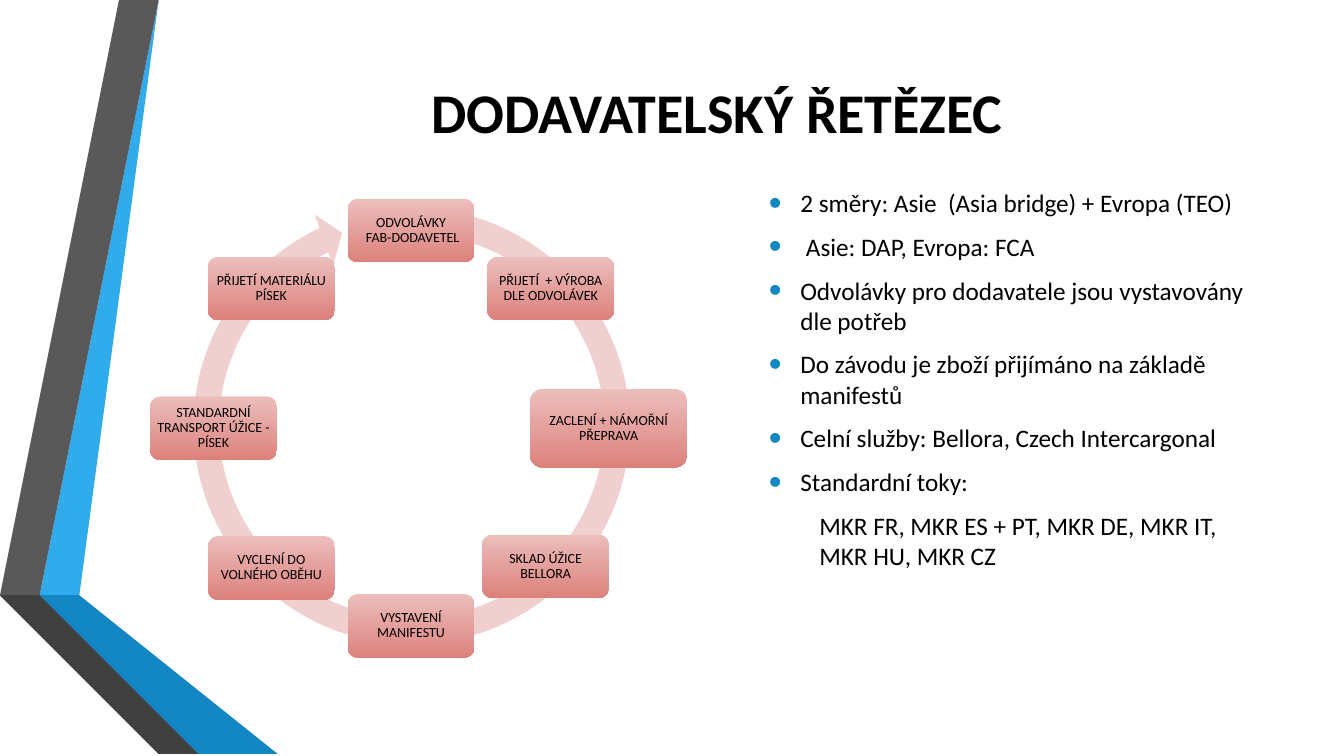
import pptx
import pptx.util
import pptx.dml.color
import pptx.enum.shapes
import pptx.enum.text
import pptx.oxml.ns
import lxml.etree
import math

Cm, Pt = pptx.util.Cm, pptx.util.Pt
RGBColor = pptx.dml.color.RGBColor
SHAPE = pptx.enum.shapes.MSO_SHAPE
ALIGN = pptx.enum.text.PP_ALIGN
ANCHOR = pptx.enum.text.MSO_ANCHOR

# Content
TITLE = "DODAVATELSKÝ ŘETĚZEC"
BULLETS = [
    "2 směry: Asie  (Asia bridge) + Evropa (TEO)",
    " Asie: DAP, Evropa: FCA",
    "Odvolávky pro dodavatele jsou vystavovány dle potřeb",
    "Do závodu je zboží přijímáno na základě manifestů",
    "Celní služby: Bellora, Czech Intercargonal",
    "Standardní toky:",
]
FLOWS = "MKR FR, MKR ES + PT, MKR DE, MKR IT,\vMKR HU, MKR CZ"

# Steps clockwise from the top: label, scale of the box, shift of its centre in cm
STEPS = [
    ("ODVOLÁVKY\v FAB-DODAVETEL", 1, (0, 0)),
    ("PŘIJETÍ  + VÝROBA DLE ODVOLÁVEK", 1, (0, 0)),
    ("ZACLENÍ + NÁMOŘNÍ PŘEPRAVA", 1.24, (0, 0)),
    ("SKLAD ÚŽICE BELLORA", 1, (-0.13, -0.04)),
    ("VYSTAVENÍ MANIFESTU", 1, (0, 0)),
    ("VYCLENÍ DO VOLNÉHO OBĚHU", 1, (0, 0)),
    ("STANDARDNÍ TRANSPORT ÚŽICE - PÍSEK", 1, (0, 0)),
    ("PŘIJETÍ MATERIÁLU PÍSEK", 1, (0, 0)),
]

# Colours and font
FONT = "Calibri"
BLACK = RGBColor(0x00, 0x00, 0x00)
BLUE = RGBColor(0x12, 0x87, 0xC3)
LIGHT_BLUE = RGBColor(0x30, 0xAC, 0xEC)
DARK_BLUE = RGBColor(0x0C, 0x5A, 0x82)
GREY = RGBColor(0x59, 0x59, 0x59)
DARK_GREY = RGBColor(0x40, 0x40, 0x40)
NEAR_BLACK = RGBColor(0x26, 0x26, 0x26)
RING_PINK = RGBColor(0xF0, 0xD0, 0xCE)
STEP_TOP = RGBColor(0xEB, 0xBE, 0xBC)
STEP_BOTTOM = RGBColor(0xDD, 0x81, 0x7C)

# Ribbon outlines in cm, from back to front
RIBBONS = [
    (LIGHT_BLUE, [(1.27, 14.68), (1.96, 14.81), (4.39, 0), (3.68, 0)]),
    (GREY, [(3.53, 0), (2.82, 0), (0.41, 14.55), (1.12, 14.66)]),
    (NEAR_BLACK, [(0.41, 14.55), (3.68, 19.05), (3.84, 19.05)]),
    (DARK_BLUE, [(1.27, 14.71), (5.28, 19.05), (5.44, 19.05)]),
    (BLUE, [(1.27, 14.7), (5.44, 19.05), (7.19, 19.05), (1.96, 14.81)]),
    (DARK_GREY, [(5.13, 19.05), (1.22, 14.81), (1.12, 14.66), (0.41, 14.55),
                 (3.84, 19.05)]),
]

# Cycle geometry in cm
CENTRE_X, CENTRE_Y, RADIUS = 10.36, 10.79, 4.98
STEP_WIDTH, STEP_HEIGHT = 3.2, 1.6
RING_LEFT, RING_TOP, RING_SIZE = 4.52, 4.88, 11.71
RING_ADJUSTMENTS = [0.055, 3.307, 146.839, 168.546, 0.058]


def set_font(para, size, bold=False):
    para.font.name = FONT
    para.font.size = Pt(size)
    para.font.bold = bold
    para.font.color.rgb = BLACK


def make_plain(shape, colour=None):
    shape.shadow.inherit = False
    shape.line.fill.background()
    if colour is not None:
        shape.fill.solid()
        shape.fill.fore_color.rgb = colour


def add_text_box(page, left, top, width, height):
    box = page.shapes.add_textbox(Cm(left), Cm(top), Cm(width), Cm(height))
    box.text_frame.word_wrap = True
    return box.text_frame


def add_bullet(para):
    props = para._p.get_or_add_pPr()
    props.set("marL", str(Cm(0.79)))
    props.set("indent", str(-Cm(0.79)))
    qn = pptx.oxml.ns.qn
    colour = lxml.etree.SubElement(props, qn("a:buClr"))
    lxml.etree.SubElement(colour, qn("a:srgbClr"), val=str(BLUE))
    lxml.etree.SubElement(props, qn("a:buSzPct"), val="145000")
    lxml.etree.SubElement(props, qn("a:buFont"), typeface="Arial")
    lxml.etree.SubElement(props, qn("a:buChar"), char="•")


def add_ribbons(page):
    for colour, points in RIBBONS:
        builder = page.shapes.build_freeform(*points[0], scale=Cm(1))
        builder.add_line_segments(points[1:], close=True)
        make_plain(builder.convert_to_shape(), colour)


def add_title(page):
    frame = add_text_box(page, 4.17, 1.12, 27.79, 3.35)
    frame.vertical_anchor = ANCHOR.MIDDLE
    para = frame.paragraphs[0]
    para.text = TITLE
    para.alignment = ALIGN.CENTER
    set_font(para, 40, bold=True)


def add_notes_list(page):
    frame = add_text_box(page, 19.13, 4.6, 12.83, 12.83)
    for index, text in enumerate(BULLETS + [FLOWS]):
        para = frame.paragraphs[0] if index == 0 else frame.add_paragraph()
        para.text = text
        if text == FLOWS:
            para._p.get_or_add_pPr().set("marL", str(Cm(1.27)))
        else:
            add_bullet(para)
        para.space_before, para.space_after = Pt(3.6), Pt(6)
        set_font(para, 18)


def add_step(page, index, label, scale, shift):
    angle = 2 * math.pi * index / len(STEPS)
    x = CENTRE_X + RADIUS * math.sin(angle) + shift[0]
    y = CENTRE_Y - RADIUS * math.cos(angle) + shift[1]
    width, height = STEP_WIDTH * scale, STEP_HEIGHT * scale
    box = page.shapes.add_shape(
        SHAPE.ROUNDED_RECTANGLE,
        Cm(x - width / 2), Cm(y - height / 2), Cm(width), Cm(height))
    make_plain(box)
    box.fill.gradient()
    box.fill.gradient_angle = 270
    for stop, colour in zip(box.fill.gradient_stops, (STEP_TOP, STEP_BOTTOM)):
        stop.color.rgb = colour

    frame = box.text_frame
    frame.word_wrap = True
    frame.vertical_anchor = ANCHOR.MIDDLE
    frame.margin_left = frame.margin_right = Cm(0.1)
    frame.margin_top = frame.margin_bottom = Cm(0.1)
    para = frame.paragraphs[0]
    para.text = label
    para.alignment = ALIGN.CENTER
    para.line_spacing = 0.9
    set_font(para, 10)


def add_cycle(page):
    ring = page.shapes.add_shape(SHAPE.CIRCULAR_ARROW, Cm(RING_LEFT),
                                 Cm(RING_TOP), Cm(RING_SIZE), Cm(RING_SIZE))
    for index, value in enumerate(RING_ADJUSTMENTS):
        ring.adjustments[index] = value
    make_plain(ring, RING_PINK)
    for index, (label, scale, shift) in enumerate(STEPS):
        add_step(page, index, label, scale, shift)


def main():
    deck = pptx.Presentation()
    deck.slide_width, deck.slide_height = Cm(33.87), Cm(19.05)
    page = deck.slides.add_slide(deck.slide_layouts[6])
    add_ribbons(page)
    add_title(page)
    add_notes_list(page)
    add_cycle(page)
    deck.save("out.pptx")


if __name__ == "__main__":
    main()
